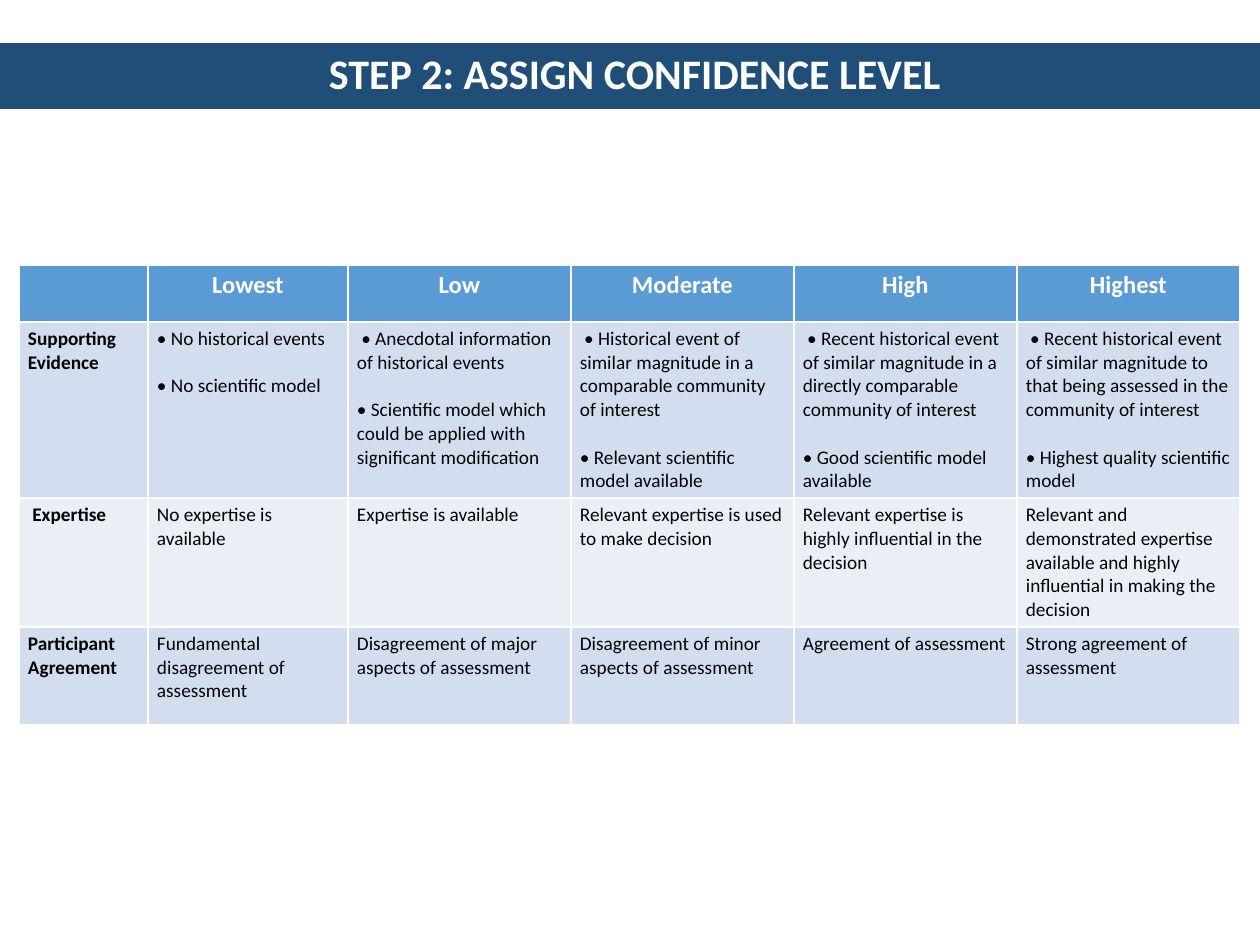
import pptx
import pptx.util
import pptx.dml.color
import pptx.enum.text

PX = 914400 // 126
CENTER = pptx.enum.text.PP_ALIGN.CENTER
LEFT = pptx.enum.text.PP_ALIGN.LEFT


def color(value):
    return pptx.dml.color.RGBColor.from_string(value)


def write(frame, text, size=11, ink="000000", bold=False, align=LEFT, gap=0, spacing=None):
    for index, line in enumerate(text.split("\n")):
        para = frame.add_paragraph() if index else frame.paragraphs[0]
        para.alignment = align
        para.line_spacing = spacing
        para.space_before = pptx.util.Pt(gap if index else 0)
        span = para.add_run()
        span.text = line
        span.font.name = "Calibri"
        span.font.size = pptx.util.Pt(size)
        span.font.bold = bold
        span.font.color.rgb = color(ink)


deck = pptx.Presentation()
deck.slide_width = 1260 * PX
deck.slide_height = 945 * PX
page = deck.slides.add_slide(deck.slide_layouts[5])

column_widths = [129, 200] + [223] * 4
row_heights = [57, 165, 121, 98]
row_fills = ["5B9BD5", "D2DEEF", "EAEFF7", "D2DEEF"]
rows = [
    ["", "Lowest", "Low", "Moderate", "High", "Highest"],
    [
        "Supporting\nEvidence",
        "• No historical events\n• No scientific model",
        " • Anecdotal information of historical events\n"
        "• Scientific model which could be applied with significant modification",
        " • Historical event of similar magnitude in a comparable community of interest\n"
        "• Relevant scientific model available",
        " • Recent historical event of similar magnitude in a directly comparable community of interest\n"
        "• Good scientific model available",
        " • Recent historical event of similar magnitude to that being assessed in the community of interest\n"
        "• Highest quality scientific model",
    ],
    [
        " Expertise",
        "No expertise is available",
        "Expertise is available",
        "Relevant expertise is used to make decision",
        "Relevant expertise is highly influential in the decision",
        "Relevant and demonstrated expertise available and highly influential in making the decision",
    ],
    [
        "Participant\nAgreement",
        "Fundamental disagreement of assessment",
        "Disagreement of major aspects of assessment",
        "Disagreement of minor aspects of assessment",
        "Agreement of assessment",
        "Strong agreement of assessment",
    ],
]

table = page.shapes.add_table(
    len(rows), len(column_widths), 19 * PX, 265 * PX, sum(column_widths) * PX, sum(row_heights) * PX
).table
for column, width in zip(table.columns, column_widths):
    column.width = width * PX
for r, texts in enumerate(rows):
    table.rows[r].height = row_heights[r] * PX
    for c, text in enumerate(texts):
        cell = table.cell(r, c)
        cell.fill.solid()
        cell.fill.fore_color.rgb = color(row_fills[r])
        cell.margin_left = cell.margin_right = 9 * PX
        cell.margin_top = cell.margin_bottom = 5 * PX
        if r == 0:
            if text:
                write(cell.text_frame, text, size=14, ink="FFFFFF", bold=True, align=CENTER)
        else:
            write(cell.text_frame, text, bold=c == 0, gap=13.43 if c else 0)

title = page.shapes.title
title.left, title.top, title.width, title.height = 0, 43 * PX, 1260 * PX, 66 * PX
title.fill.solid()
title.fill.fore_color.rgb = color("1F4E79")
title.text_frame.auto_size = pptx.enum.text.MSO_AUTO_SIZE.NONE
title.text_frame.vertical_anchor = pptx.enum.text.MSO_ANCHOR.MIDDLE
write(title.text_frame, " STEP 2: ASSIGN CONFIDENCE LEVEL", size=24, ink="FFFFFF", bold=True, align=CENTER, spacing=0.9)

deck.save("out.pptx")
